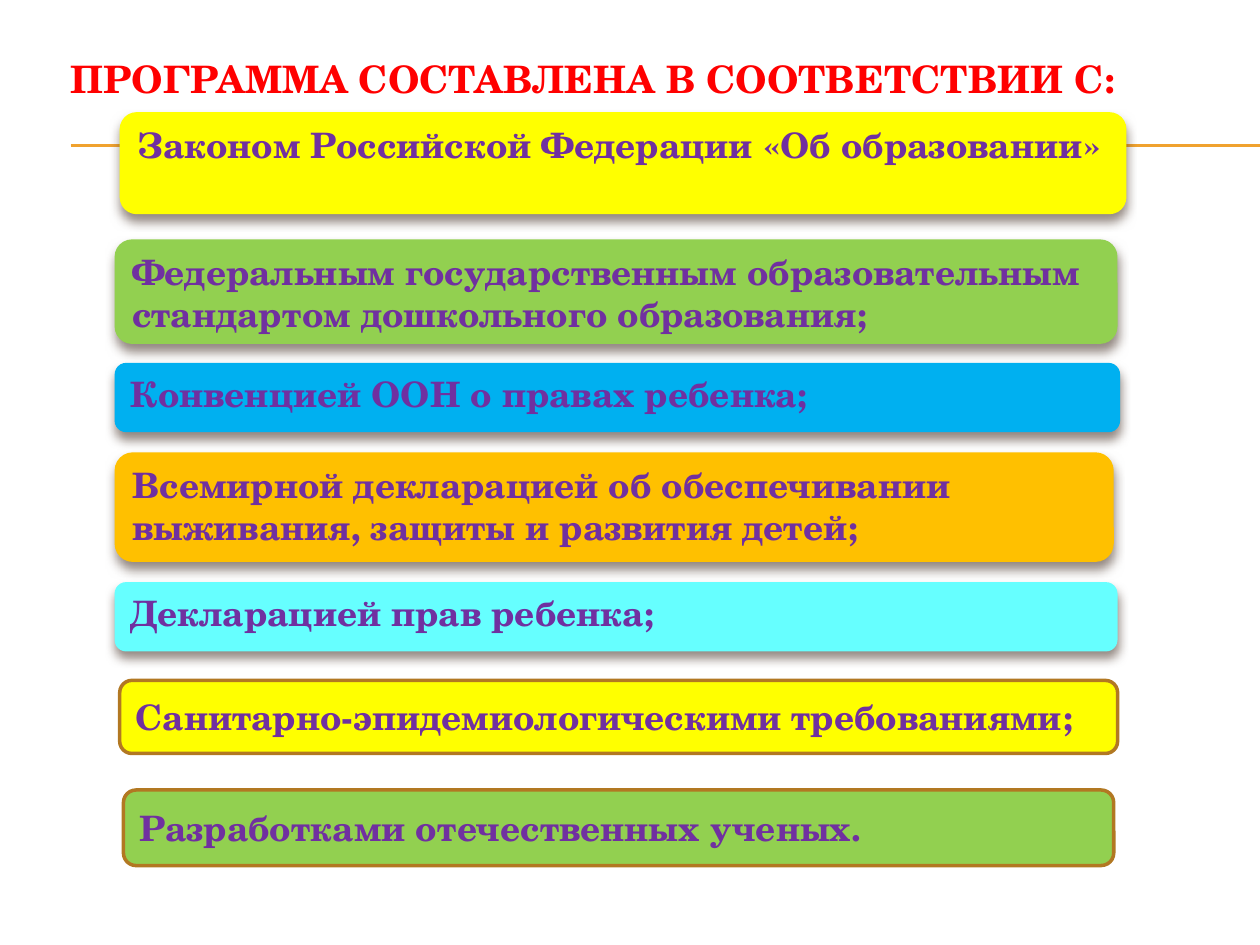
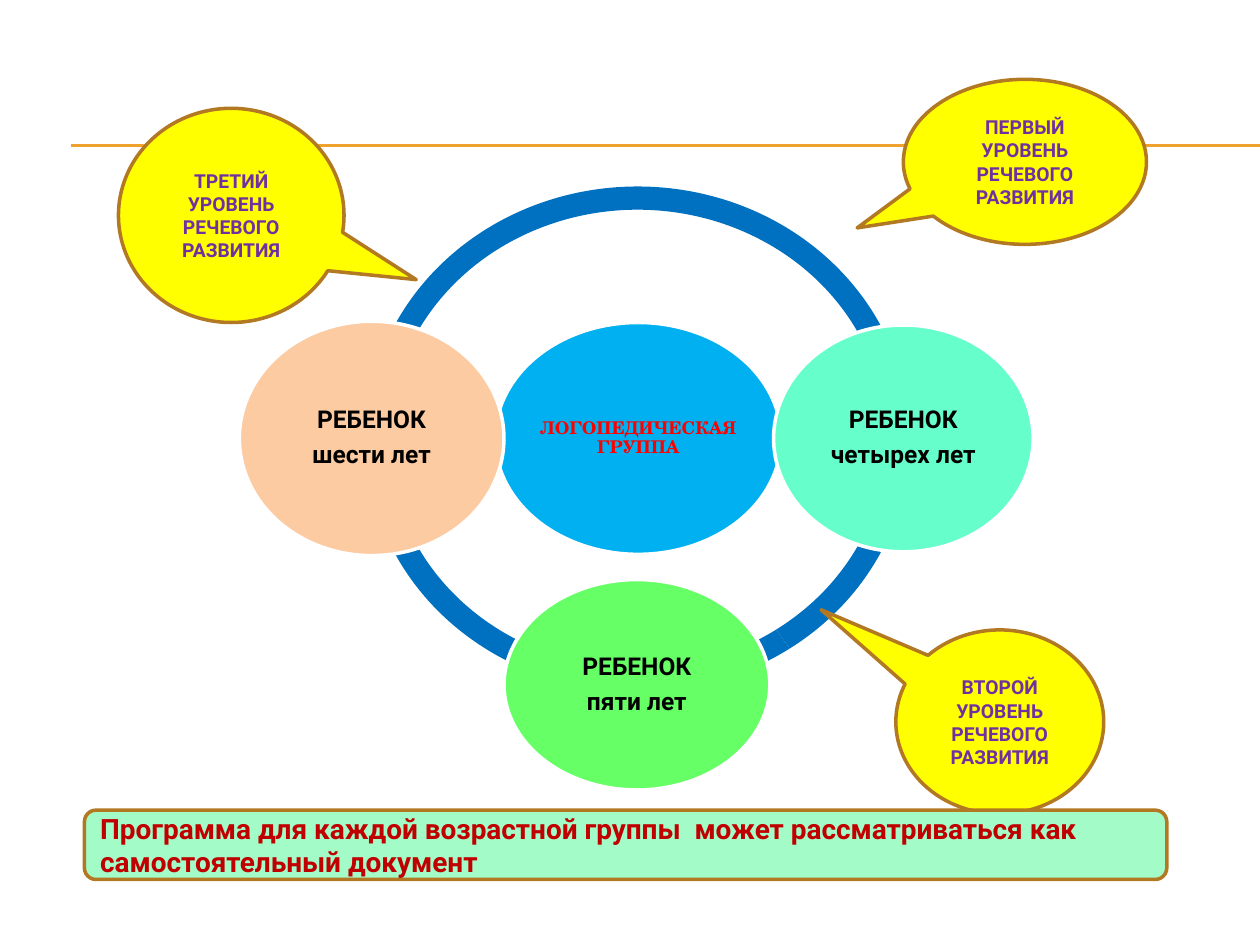
from lxml.etree import SubElement
from pptx import Presentation
from pptx.dml.color import RGBColor
from pptx.enum.shapes import MSO_CONNECTOR, MSO_SHAPE
from pptx.enum.text import MSO_ANCHOR, PP_ALIGN
from pptx.oxml import parse_xml
from pptx.oxml.ns import nsdecls, qn
from pptx.util import Inches, Pt

COLORS = {
    "rule": "F0A22E", "border": "B27822", "white": "FFFFFF", "black": "000000",
    "red": "FF0000", "dark_red": "C00000", "purple": "7030A0", "yellow": "FFFF00",
    "green": "92D050", "blue": "00B0F0", "orange": "FFC000", "cyan": "66FFFF",
    "ring": "0070C0", "aqua": "66FFCC", "lime": "66FF66", "peach": "FCCBA2",
    "mint": "A3FBC7", "shadow": "4E3B30",
}
SERIF, SANS = "TeX Gyre Schola", "Roboto"

presentation = Presentation()
presentation.slide_width = Inches(10)
presentation.slide_height = Inches(7.5)
COLUMN = presentation.slide_width / 100
ROW = presentation.slide_height / 75


def write_text(shape, lines, font, color, frame=None, layout=None):
    text_frame = shape.text_frame
    for name, value in {"word_wrap": True, "vertical_anchor": MSO_ANCHOR.MIDDLE, **(frame or {})}.items():
        setattr(text_frame, name, value)
    for index, line in enumerate(lines):
        paragraph = text_frame.add_paragraph() if index else text_frame.paragraphs[0]
        for name, value in {"alignment": PP_ALIGN.CENTER, **(layout or {})}.items():
            setattr(paragraph, name, value)
        run = paragraph.add_run()
        run.text = line
        for name, value in {"bold": True, **font}.items():
            setattr(run.font, name, value)
        run.font.color.rgb = RGBColor.from_string(COLORS[color])


def add_figure(slide, kind, place, fill, line=None, adjustments=()):
    column, row, columns, rows = place
    shape = slide.shapes.add_shape(
        kind, int(column * COLUMN), int(row * ROW), int(columns * COLUMN), int(rows * ROW))
    shape.shadow.inherit = False
    shape.fill.solid()
    shape.fill.fore_color.rgb = RGBColor.from_string(COLORS[fill])
    if line:
        shape.line.color.rgb = RGBColor.from_string(COLORS[line])
        shape.line.width = Pt(2)
    else:
        shape.line.fill.background()
    for index, value in enumerate(adjustments):
        shape.adjustments[index] = value
    return shape


basis_slide, group_slide = [
    presentation.slides.add_slide(presentation.slide_layouts[6]) for _ in range(2)]

for slide in (basis_slide, group_slide):
    for row in (11.5, 11.6):
        rule = slide.shapes.add_connector(
            MSO_CONNECTOR.STRAIGHT, int(5.6 * COLUMN), int(row * ROW),
            int(100 * COLUMN), int(row * ROW))
        rule.line.color.rgb = RGBColor.from_string(COLORS["rule"])
        rule.line.width = Pt(0.75)
        SubElement(rule._element.spPr, qn("a:effectLst"))

title = basis_slide.shapes.add_textbox(
    int(4.6 * COLUMN), 0, int(90 * COLUMN), int(10.5 * ROW))
write_text(title, ["ПРОГРАММА СОСТАВЛЕНА В СООТВЕТСТВИИ С:"],
           {"name": SERIF, "size": Pt(21.6)}, "red",
           {"margin_top": Inches(0.25)}, {"alignment": PP_ALIGN.LEFT})

documents = [
    ("Законом Российской Федерации «Об образовании»", (9.5, 8.9, 79.9, 8.1), "yellow", None),
    ("Федеральным государственным образовательным стандартом дошкольного образования;",
     (9.1, 19, 79.6, 8.3), "green", None),
    ("Конвенцией ООН о правах ребенка;", (9.1, 28.8, 79.8, 5.5), "blue", None),
    ("Всемирной декларацией об обеспечивании выживания, защиты и развития детей;",
     (9.1, 35.9, 79.3, 8.7), "orange", None),
    ("Декларацией прав ребенка;", (9.1, 46.2, 79.6, 5.5), "cyan", None),
    ("Санитарно-эпидемиологическими требованиями;", (9.5, 54, 79.2, 5.8), "yellow", "border"),
    ("Разработками отечественных ученых.", (9.8, 62.7, 78.6, 6), "green", "border"),
]
for text, place, fill, line in documents:
    bar = add_figure(basis_slide, MSO_SHAPE.ROUNDED_RECTANGLE, place, fill, line)
    anchor = MSO_ANCHOR.MIDDLE if line else MSO_ANCHOR.TOP
    write_text(bar, [text], {"name": SERIF, "size": Pt(20)}, "purple",
               {"vertical_anchor": anchor}, {"alignment": PP_ALIGN.LEFT})
    if not line:
        effects = bar._element.spPr.find(qn("a:effectLst"))
        effects.append(parse_xml(
            f'<a:outerShdw {nsdecls("a")} blurRad="{Pt(6)}" dist="{Pt(4)}" dir="5400000" '
            f'rotWithShape="0"><a:srgbClr val="{COLORS["shadow"]}">'
            '<a:alpha val="60000"/></a:srgbClr></a:outerShdw>'))

ring_angles = [108, 54, 0, 162]
ring_ends = [162, 108, 54, 0]
for start, end in zip(ring_angles, ring_ends):
    add_figure(group_slide, MSO_SHAPE.BLOCK_ARC, (29, 14.8, 43.2, 40.1), "ring",
               adjustments=(start * 0.6, end * 0.6, 0.046))

child_font = {"name": SANS, "size": Pt(14)}
ovals = [
    (["ЛОГОПЕДИЧЕСКАЯ ГРУППА"], (39.3, 25.6, 22.7, 18.4), "blue",
     {"name": SERIF, "size": Pt(10)}, "red"),
    (["РЕБЕНОК", "четырех лет"], (61.4, 25.8, 20.6, 18), "aqua", child_font, "black"),
    (["РЕБЕНОК", "пяти лет"], (40, 46, 21.1, 16.7), "lime", child_font, "black"),
    (["РЕБЕНОК", "шести лет"], (19, 25.5, 21, 18.6), "peach", child_font, "black"),
]
oval_margins = {f"margin_{side}": Inches(0.01) for side in ("left", "top", "right", "bottom")}
for lines, place, fill, font, color in ovals:
    oval = add_figure(group_slide, MSO_SHAPE.OVAL, place, fill, "white")
    write_text(oval, lines, font, color, oval_margins,
               {"line_spacing": 0.9, "space_after": Pt(font["size"].pt * 0.35)})

levels = [
    (["ПЕРВЫЙ", "УРОВЕНЬ", "РЕЧЕВОГО РАЗВИТИЯ"], (71.7, 6.3, 19.3, 13.1), (-0.69, 0.4)),
    (["ВТОРОЙ УРОВЕНЬ РЕЧЕВОГО РАЗВИТИЯ"], (71.1, 50, 16.5, 14.6), (-0.86, -0.61)),
    (["ТРЕТИЙ УРОВЕНЬ РЕЧЕВОГО РАЗВИТИЯ"], (9.4, 8.6, 17.9, 17), (0.82, 0.3)),
]
for lines, place, tip in levels:
    callout = add_figure(group_slide, MSO_SHAPE.OVAL_CALLOUT, place, "yellow", "border", tip)
    write_text(callout, lines, {"name": SANS, "size": Pt(11)}, "purple")

summary = add_figure(group_slide, MSO_SHAPE.ROUNDED_RECTANGLE,
                     (6.7, 64.3, 85.9, 5.5), "mint", "border")
write_text(summary,
           ["Программа для каждой возрастной группы  может рассматриваться как самостоятельный документ"],
           {"name": SANS, "size": Pt(16)}, "dark_red", layout={"alignment": PP_ALIGN.LEFT})

presentation.save("out.pptx")
